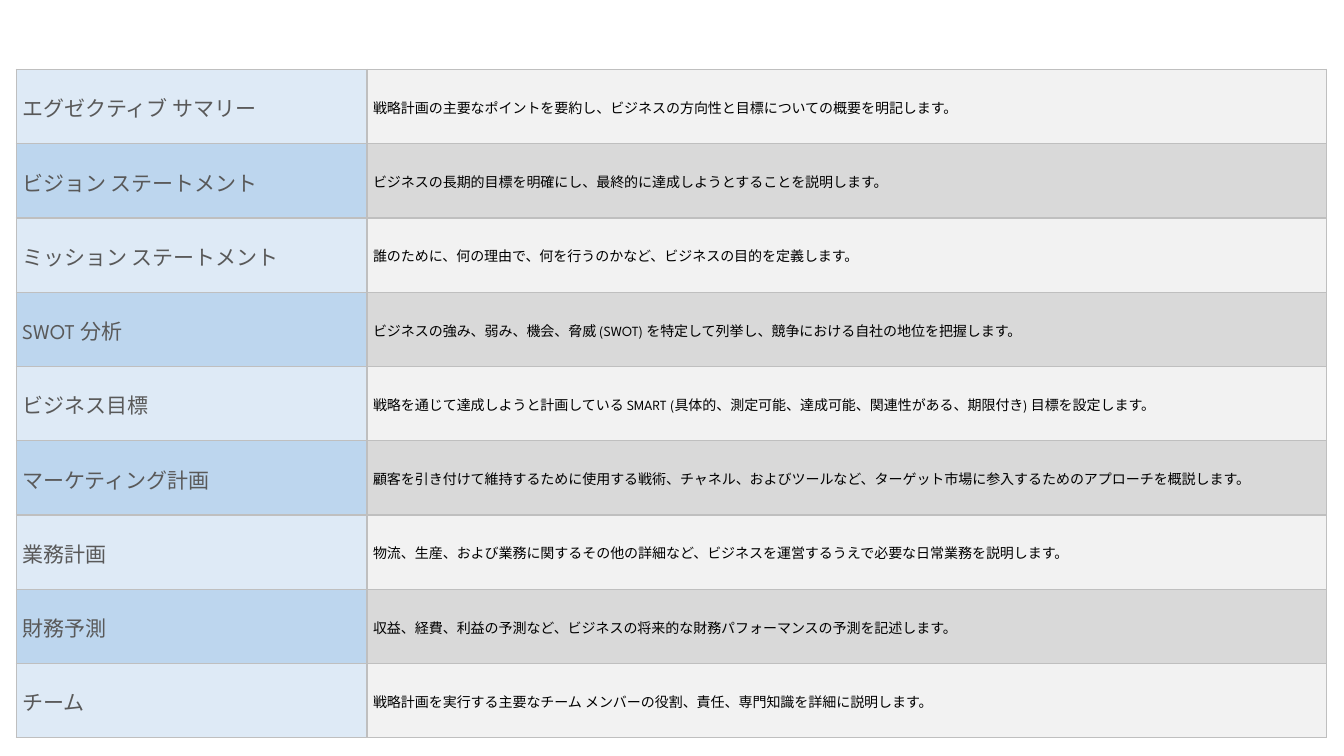
import pptx
import pptx.dml.color
import pptx.enum.lang
import pptx.enum.text
import pptx.oxml
import pptx.oxml.ns
import pptx.util
from pptx.dml.color import RGBColor
from pptx.util import Inches, Pt

PLAN_SECTIONS = [
    ("エグゼクティブ サマリー",
     "戦略計画の主要なポイントを要約し、ビジネスの方向性と目標についての概要を明記します。"),
    ("ビジョン ステートメント",
     "ビジネスの長期的目標を明確にし、最終的に達成しようとすることを説明します。"),
    ("ミッション ステートメント",
     "誰のために、何の理由で、何を行うのかなど、ビジネスの目的を定義します。"),
    ("SWOT 分析",
     "ビジネスの強み、弱み、機会、脅威 (SWOT) を特定して列挙し、競争における自社の地位を把握します。"),
    ("ビジネス目標",
     "戦略を通じて達成しようと計画している SMART (具体的、測定可能、達成可能、関連性がある、期限付き) 目標を設定します。"),
    ("マーケティング計画",
     "顧客を引き付けて維持するために使用する戦術、チャネル、およびツールなど、ターゲット市場に参入するためのアプローチを概説します。"),
    ("業務計画",
     "物流、生産、および業務に関するその他の詳細など、ビジネスを運営するうえで必要な日常業務を説明します。"),
    ("財務予測",
     "収益、経費、利益の予測など、ビジネスの将来的な財務パフォーマンスの予測を記述します。"),
    ("チーム",
     "戦略計画を実行する主要なチーム メンバーの役割、責任、専門知識を詳細に説明します。"),
]

FONT = "League Spartan"
BORDER = RGBColor(0xBF, 0xBF, 0xBF)
SECTION_FILLS = (RGBColor(0xDE, 0xEA, 0xF6), RGBColor(0xBD, 0xD6, 0xEE))
DESCRIPTION_FILLS = (RGBColor(0xF2, 0xF2, 0xF2), RGBColor(0xD9, 0xD9, 0xD9))
SECTION_TEXT = RGBColor(0x59, 0x59, 0x59)
DESCRIPTION_TEXT = RGBColor(0, 0, 0)

# width in inches, text size, text colour, alternating fills
COLUMNS = [
    (3.48, 15, SECTION_TEXT, SECTION_FILLS),
    (9.52, 10, DESCRIPTION_TEXT, DESCRIPTION_FILLS),
]
LEFT, TOP, HEIGHT = 0.16, 0.69, 6.63


def add_borders(cell):
    """Draw a thin line on all four sides; the lines must precede the fill."""
    properties = cell._tc.get_or_add_tcPr()
    for position, side in enumerate(("lnL", "lnR", "lnT", "lnB")):
        properties.insert(position, pptx.oxml.parse_xml(
            f'<a:{side} {pptx.oxml.ns.nsdecls("a")} w="{Pt(1)}">'
            f'<a:solidFill><a:srgbClr val="{BORDER}"/></a:solidFill></a:{side}>'))


def fill_cell(cell, text, size, color, fill):
    cell.margin_left = cell.margin_right = Inches(0.06)
    cell.margin_top = cell.margin_bottom = 0
    cell.vertical_anchor = pptx.enum.text.MSO_ANCHOR.MIDDLE
    cell.fill.solid()
    cell.fill.fore_color.rgb = fill
    add_borders(cell)
    cell.text_frame.text = text
    paragraph = cell.text_frame.paragraphs[0]
    paragraph.line_spacing = 1.07
    font = paragraph.runs[0].font
    font.name = FONT
    font.size = Pt(size)
    font.color.rgb = color
    font.language_id = pptx.enum.lang.MSO_LANGUAGE_ID.JAPANESE


def main():
    deck = pptx.Presentation()
    deck.slide_width, deck.slide_height = Inches(13.33), Inches(7.5)
    slide = deck.slides.add_slide(deck.slide_layouts[6])

    plan = slide.shapes.add_table(
        len(PLAN_SECTIONS), len(COLUMNS), Inches(LEFT), Inches(TOP),
        Inches(sum(column[0] for column in COLUMNS)), Inches(HEIGHT)).table
    plan.first_row = plan.horz_banding = False

    for column, (width, size, color, fills) in enumerate(COLUMNS):
        plan.columns[column].width = Inches(width)
        for row, section in enumerate(PLAN_SECTIONS):
            fill_cell(plan.cell(row, column), section[column], size, color,
                      fills[row % 2])

    deck.save("out.pptx")


if __name__ == "__main__":
    main()
